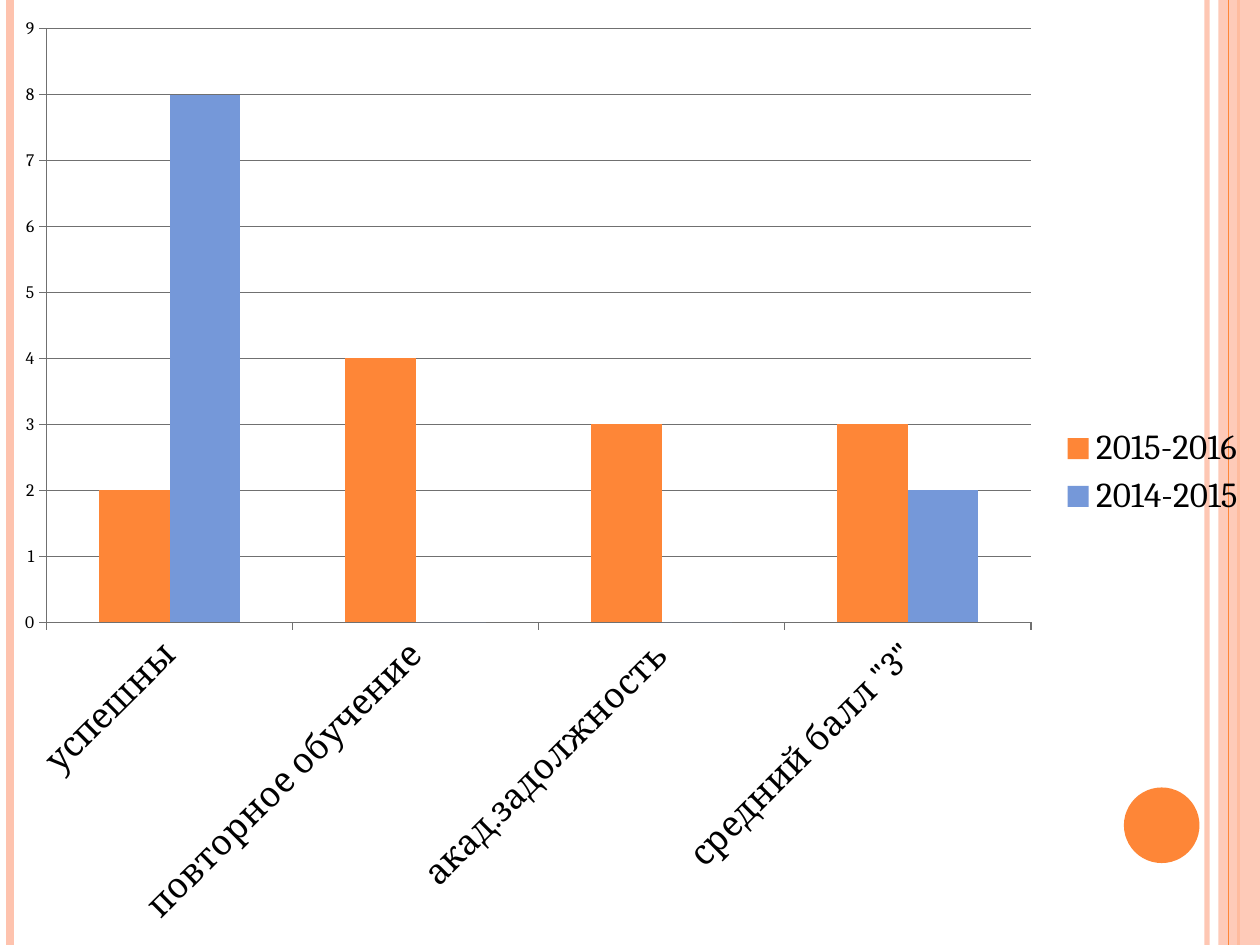
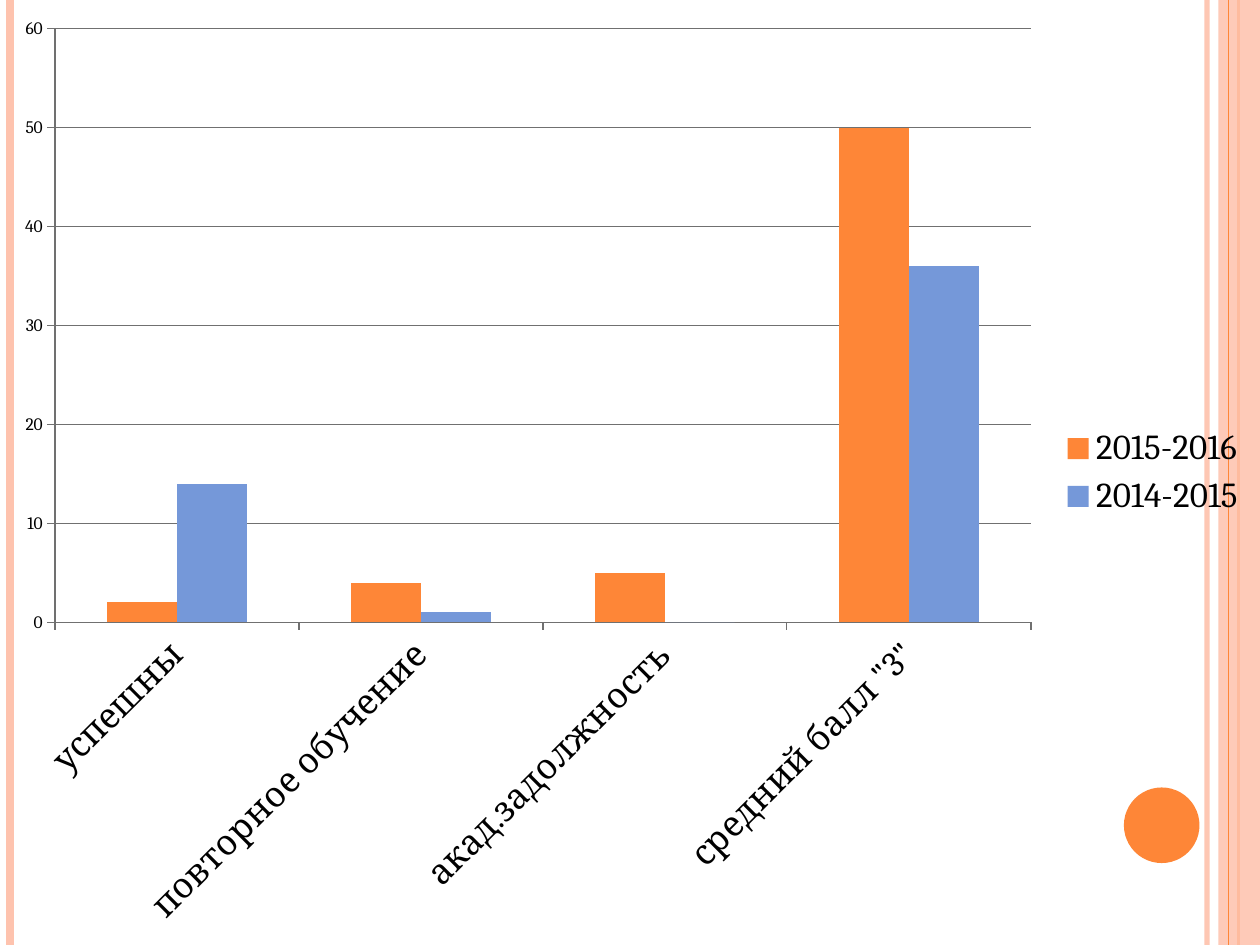
from dataclasses import dataclass

from lxml import etree
from pptx import Presentation
from pptx.chart.data import CategoryChartData
from pptx.dml.color import RGBColor
from pptx.enum.chart import XL_CHART_TYPE, XL_LEGEND_POSITION, XL_TICK_MARK
from pptx.enum.shapes import MSO_CONNECTOR, MSO_SHAPE
from pptx.oxml.ns import qn
from pptx.util import Inches, Pt

COLUMN = XL_CHART_TYPE.COLUMN_CLUSTERED
RIGHT = XL_LEGEND_POSITION.RIGHT
OUTSIDE = XL_TICK_MARK.OUTSIDE
STRAIGHT = MSO_CONNECTOR.STRAIGHT
RECT, OVAL = MSO_SHAPE.RECTANGLE, MSO_SHAPE.OVAL
WIDE, HIGH = Inches(10), Inches(7.5)


@dataclass(frozen=True)
class Theme:
    font: str = "Cambria"
    ink: RGBColor = RGBColor(0, 0, 0)
    paper: RGBColor = RGBColor(0xFF, 0xFF, 0xFF)
    peach: RGBColor = RGBColor(0xFE, 0xC3, 0xAE)
    orange: RGBColor = RGBColor(0xFE, 0x86, 0x37)
    blue: RGBColor = RGBColor(0x75, 0x98, 0xD9)
    grid: RGBColor = RGBColor(0x70, 0x70, 0x70)
    small: Pt = Pt(10)
    large: Pt = Pt(20)
    hair: Pt = Pt(0.75)


@dataclass(frozen=True)
class Stripe:
    x: float
    color: RGBColor
    weight: float
    alpha: int = 100


@dataclass(frozen=True)
class Block:
    kind: MSO_SHAPE
    x: float
    y: float
    width: float
    height: float
    color: RGBColor
    alpha: int = 100


@dataclass(frozen=True)
class Year:
    name: str
    color: RGBColor


THEME = Theme()
DECOR = (
    Stripe(9.58, THEME.peach, 3, 93),
    Stripe(0.08, THEME.peach, 4.5),
    Stripe(9.83, THEME.orange, 1.5),
    Block(RECT, 9.67, 0, 0.33, 7.5, THEME.peach, 87),
    Stripe(9.75, THEME.orange, 0.75),
    Block(OVAL, 8.92, 6.25, 0.6, 0.6, THEME.orange),
)
YEARS = (Year("2015-2016", THEME.orange), Year("2014-2015", THEME.blue))
GROUPS = ("успешны", "повторное обучение", "акад.задолжность", 'средний балл "3"')
RESULTS = (
    ((2, 4, 3, 3), (8, 0, 0, 2)),
    ((2, 4, 5, 50), (14, 1, 0, 36)),
)


def fade(shape, alpha: int) -> None:
    if alpha < 100:
        color = next(shape._element.spPr.iter(qn("a:srgbClr")))
        etree.SubElement(color, qn("a:alpha")).set("val", str(alpha * 1000))


def draw_stripe(slide, item: Stripe) -> None:
    x = Inches(item.x)
    line = slide.shapes.add_connector(STRAIGHT, x, 0, x, HIGH)
    line.line.color.rgb = item.color
    line.line.width = Pt(item.weight)
    fade(line, item.alpha)
    etree.SubElement(line._element.spPr, qn("a:effectLst"))


def draw_block(slide, item: Block) -> None:
    box = (Inches(v) for v in (item.x, item.y, item.width, item.height))
    shape = slide.shapes.add_shape(item.kind, *box)
    shape.shadow.inherit = False
    shape.fill.solid()
    shape.fill.fore_color.rgb = item.color
    shape.line.fill.background()
    fade(shape, item.alpha)


def set_font(font, size: Pt) -> None:
    font.name = THEME.font
    font.size = size
    font.color.rgb = THEME.ink


def set_line(line) -> None:
    line.color.rgb = THEME.grid
    line.width = THEME.hair


def style_axis(axis, size: Pt) -> None:
    axis.major_tick_mark = OUTSIDE
    set_font(axis.tick_labels.font, size)
    set_line(axis.format.line)


def draw_chart(slide, rows: tuple[tuple[int, ...], ...]) -> None:
    data = CategoryChartData()
    data.categories = GROUPS
    for year, row in zip(YEARS, rows):
        data.add_series(year.name, row)
    chart = slide.shapes.add_chart(COLUMN, 0, 0, WIDE, HIGH, data).chart
    set_font(chart.font, THEME.small)
    chart.has_title = False
    chart.has_legend = True
    chart.legend.position = RIGHT
    chart.legend.include_in_layout = False
    set_font(chart.legend.font, THEME.large)

    style_axis(chart.category_axis, THEME.large)
    body = chart.category_axis._element.find(qn("c:txPr")).find(qn("a:bodyPr"))
    body.set("rot", str(-45 * 60000))
    style_axis(chart.value_axis, THEME.small)
    chart.value_axis.has_major_gridlines = True
    set_line(chart.value_axis.major_gridlines.format.line)

    plot = chart.plots[0]
    plot.vary_by_categories = False
    plot.gap_width = 150
    plot.overlap = 0
    for year, series in zip(YEARS, plot.series):
        series.format.fill.solid()
        series.format.fill.fore_color.rgb = year.color


def main() -> None:
    deck = Presentation()
    deck.slide_width, deck.slide_height = WIDE, HIGH
    blank = deck.slide_layouts[6]
    fill = deck.slide_master.background.fill
    fill.solid()
    fill.fore_color.rgb = THEME.paper
    for rows in RESULTS:
        slide = deck.slides.add_slide(blank)
        for item in DECOR:
            draw = draw_stripe if isinstance(item, Stripe) else draw_block
            draw(slide, item)
        draw_chart(slide, rows)
    deck.save("out.pptx")


if __name__ == "__main__":
    main()
